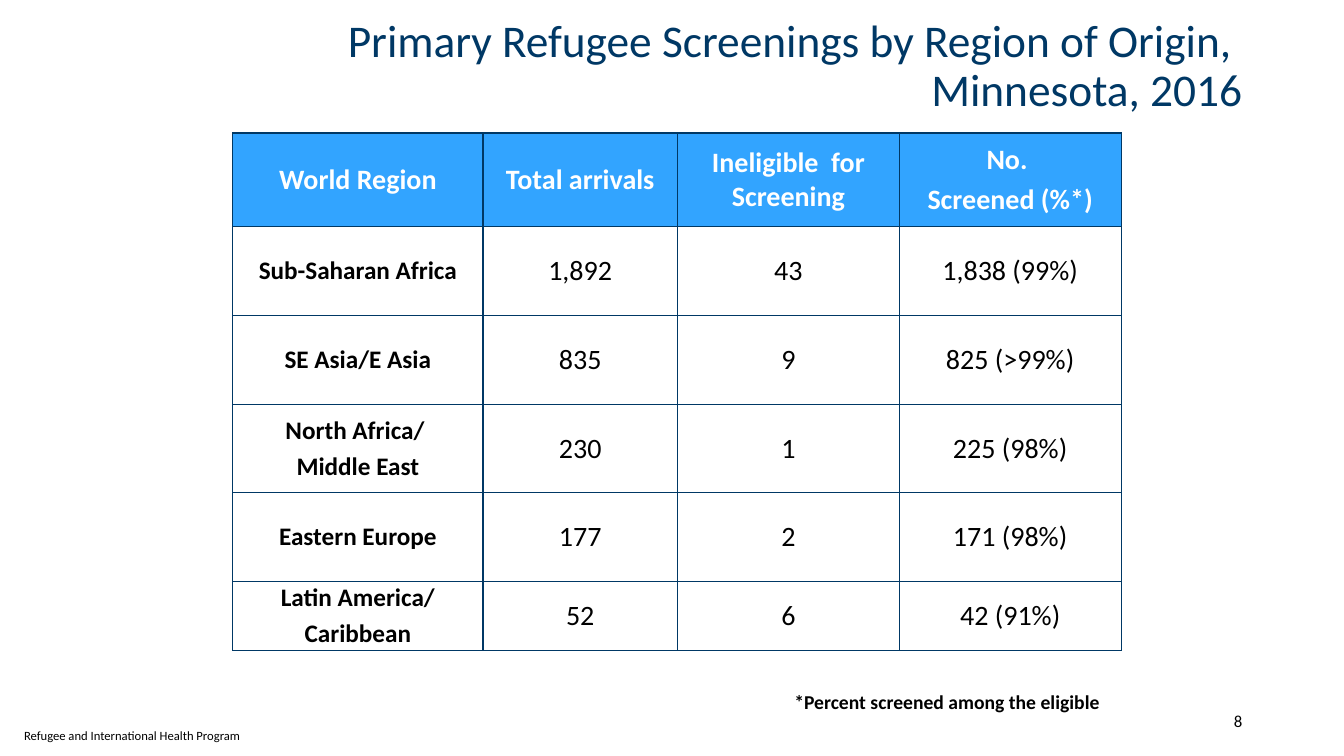
import pptx
import pptx.util
import pptx.dml.color
import pptx.enum.text
import pptx.oxml
import pptx.oxml.ns
from pptx.util import Inches

FONT = "Calibri"
COLORS = {"navy": "003865", "header": "32A4FF", "white": "FFFFFF", "black": "000000"}
ALIGN = pptx.enum.text.PP_ALIGN
ANCHOR = pptx.enum.text.MSO_ANCHOR

COLUMN_WIDTHS = [2.48, 1.93, 2.2, 2.2]
ROW_HEIGHTS = [0.93, 0.88, 0.88, 0.88, 0.88, 0.68]
# Each cell holds one paragraph per line
ROWS = [
    ["World Region", "Total arrivals", "Ineligible  for Screening", "No. \nScreened (%*)"],
    ["Sub-Saharan Africa", "1,892", "43", "1,838 (99%)"],
    ["SE Asia/E Asia", "835", "9", "825 (>99%)"],
    ["North Africa/ \nMiddle East", "230", "1", "225 (98%)"],
    ["Eastern Europe", "177", "2", "171 (98%)"],
    ["Latin America/\nCaribbean", "52", "6", "42 (91%)"],
]


def rgb(name):
    return pptx.dml.color.RGBColor.from_string(COLORS[name])


def add_run(paragraph, text, size, color="black", bold=False):
    run = paragraph.add_run()
    run.text = text
    run.font.name = FONT
    run.font.size = pptx.util.Pt(size)
    run.font.bold = bold
    run.font.color.rgb = rgb(color)


def add_text(slide, box, lines, size, color="black", bold=False,
             align=ALIGN.LEFT, anchor=ANCHOR.TOP, line_spacing=None):
    """Place one paragraph, with line breaks between its lines."""
    shape = slide.shapes.add_textbox(*[Inches(length) for length in box])
    frame = shape.text_frame
    frame.word_wrap = True
    frame.vertical_anchor = anchor
    paragraph = frame.paragraphs[0]
    paragraph.alignment = align
    if line_spacing:
        paragraph.line_spacing = line_spacing
    for index, line in enumerate(lines):
        if index:
            paragraph.add_line_break()
        add_run(paragraph, line, size, color, bold)


def set_borders(cell):
    properties = cell._tc.get_or_add_tcPr()
    for position, side in enumerate(("lnL", "lnR", "lnT", "lnB")):
        border = pptx.oxml.parse_xml(
            f'<a:{side} {pptx.oxml.ns.nsdecls("a")} w="12700"><a:solidFill>'
            f'<a:srgbClr val="{COLORS["navy"]}"/></a:solidFill></a:{side}>')
        properties.insert(position, border)


def fill_cell(cell, text, is_header, is_label):
    size = 18 if is_label and not is_header else 20
    cell.vertical_anchor = ANCHOR.MIDDLE
    cell.margin_left = cell.margin_right = Inches(0.1 if is_header else 0)
    cell.margin_top = cell.margin_bottom = Inches(0.05 if is_header else 0)
    if is_header:
        cell.fill.solid()
        cell.fill.fore_color.rgb = rgb("header")
    else:
        cell.fill.background()
    set_borders(cell)
    for index, line in enumerate(text.split("\n")):
        frame = cell.text_frame
        paragraph = frame.add_paragraph() if index else frame.paragraphs[0]
        paragraph.alignment = ALIGN.CENTER
        if index:
            paragraph.space_before = pptx.util.Pt(size * 0.2)
        add_run(paragraph, line, size, "white" if is_header else "black",
                is_header or is_label)


def add_screening_table(slide, left, top):
    frame = slide.shapes.add_table(
        len(ROWS), len(COLUMN_WIDTHS), Inches(left), Inches(top),
        Inches(sum(COLUMN_WIDTHS)), Inches(sum(ROW_HEIGHTS)))
    table = frame.table
    table.first_row = table.horz_banding = False
    for column, width in zip(table.columns, COLUMN_WIDTHS):
        column.width = Inches(width)
    for row, height in zip(table.rows, ROW_HEIGHTS):
        row.height = Inches(height)
    for row_index, texts in enumerate(ROWS):
        for column_index, text in enumerate(texts):
            fill_cell(table.cell(row_index, column_index), text,
                      row_index == 0, column_index == 0)


def add_footer(slide, left, right):
    add_text(slide, (left, 7.17, 2.36, 0.25),
             ["Refugee and International Health Program"], 9)
    add_text(slide, (right - 1.6, 6.95, 1.6, 0.4), ["8"], 12,
             align=ALIGN.RIGHT, anchor=ANCHOR.MIDDLE)


def main():
    presentation = pptx.Presentation()
    presentation.slide_width = Inches(13.33)
    presentation.slide_height = Inches(7.5)
    slide = presentation.slides.add_slide(presentation.slide_layouts[6])

    # Footer and slide number
    add_footer(slide, 0.14, 12.42)
    # Title
    add_text(slide, (0.92, 0.17, 11.5, 1),
             ["Primary Refugee Screenings by Region of Origin, ", "Minnesota, 2016"],
             32.4, "navy", align=ALIGN.RIGHT, anchor=ANCHOR.MIDDLE, line_spacing=0.9)
    # Table and its footnote
    add_screening_table(slide, 2.31, 1.32)
    add_text(slide, (7.78, 6.8, 3.3, 0.34),
             ["*Percent screened among the eligible"], 14, bold=True)

    presentation.save("out.pptx")


if __name__ == "__main__":
    main()
